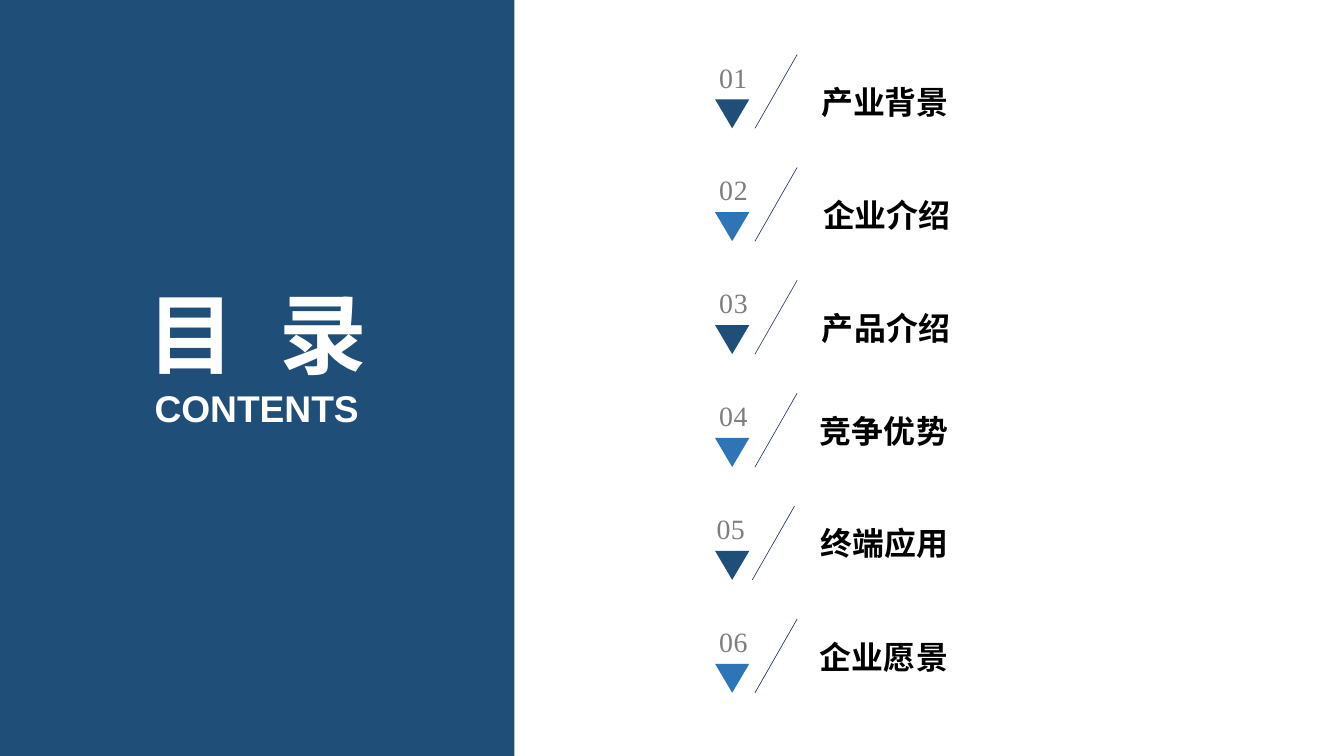
from dataclasses import dataclass

from lxml.etree import SubElement
from pptx import Presentation
from pptx.dml.color import RGBColor as Rgb
from pptx.enum.shapes import MSO_CONNECTOR as Line, MSO_SHAPE as Preset
from pptx.enum.text import MSO_ANCHOR as Anchor, MSO_AUTO_SIZE as Fit, PP_ALIGN as Align
from pptx.oxml.ns import qn
from pptx.util import Cm, Pt


@dataclass(frozen=True)
class Theme:
    navy: Rgb = Rgb(0x1F, 0x4E, 0x79)
    blue: Rgb = Rgb(0x2D, 0x75, 0xB6)
    slash: Rgb = Rgb(0x1F, 0x38, 0x63)
    grey: Rgb = Rgb(0x7E, 0x7E, 0x7E)
    black: Rgb = Rgb(0, 0, 0)
    white: Rgb = Rgb(255, 255, 255)
    title: Pt = Pt(66)
    subtitle: Pt = Pt(28)
    label: Pt = Pt(24)
    number: Pt = Pt(21)
    slash_width: Pt = Pt(0.48)
    heading_font: str = "Arial"
    label_font: str = "Noto Sans CJK SC"
    number_font: str = "Times New Roman"


theme = Theme()


def write(box, spans, font, align=Align.LEFT, anchor=Anchor.TOP, indent=0):
    """Fill a box with (text, letter spacing in points) spans of one font."""
    frame = box.text_frame
    frame_format = dict(word_wrap=True, auto_size=Fit.SHAPE_TO_FIT_TEXT,
                        vertical_anchor=anchor, margin_left=Cm(indent),
                        margin_right=0, margin_top=0, margin_bottom=0)
    for name, value in frame_format.items():
        setattr(frame, name, value)
    para = frame.paragraphs[0]
    para.alignment = align
    for text, spacing in spans:
        span = para.add_run()
        span.text = text
        span.font.color.rgb = font["color"]
        for name in ("name", "size", "bold"):
            setattr(span.font, name, font[name])
        properties = span.font._element
        properties.set("spc", str(round(spacing * 100)))
        SubElement(properties, qn("a:ea"), typeface=theme.label_font)


def add_solid(preset, left, top, width, height, color):
    shape = page.shapes.add_shape(preset, Cm(left), Cm(top), Cm(width), Cm(height))
    shape.shadow.inherit = False
    shape.fill.solid()
    shape.fill.fore_color.rgb = color
    shape.line.fill.background()
    return shape


deck = Presentation()
deck.slide_width, deck.slide_height = Cm(35.71), Cm(20.09)
page = deck.slides.add_slide(deck.slide_layouts[5])

# Left panel with the heading
heading_font = dict(name=theme.heading_font, size=theme.title, bold=True, color=theme.white)
panel = add_solid(Preset.RECTANGLE, 0, 0, 13.67, 20.09, theme.navy)
title = page.shapes.title
title._element.addprevious(panel._element)
title.left, title.top, title.width, title.height = Cm(3.45), Cm(7.42), Cm(6.76), Cm(2.82)
write(title, [("目 ", 9.2), ("录", 0)], heading_font, Align.CENTER, Anchor.MIDDLE)

subtitle = page.shapes.add_textbox(Cm(3.48), Cm(10.24), Cm(6.68), Cm(1.19))
write(subtitle, [("CONTENTS", 0)], heading_font | dict(size=theme.subtitle), Align.CENTER)

# Chapters: label, its left edge, its drop below the row top, its width,
# letter spacing of number and label, shift of number and slash
chapters = [
    ("产业背景", 21.72, 0.74, 10.69, 0.2, 0, 0),
    ("企业介绍", 21.77, 0.74, 10.54, 0.5, 0, 0),
    ("产品介绍", 21.74, 0.74, 12.37, 0.5, 0.3, 0),
    ("竞争优势", 21.67, 0.5, 11.89, 0.4, 0.3, 0),
    ("终端应用", 21.69, 0.46, 10.11, 0.4, 0.3, -0.07),
    ("企业愿景", 21.67, 0.5, 11.89, 0.4, 0.3, 0),
]
first_top, pitch = 1.45, 3.0
number_font = dict(name=theme.number_font, size=theme.number, bold=False, color=theme.grey)
label_font = dict(name=theme.label_font, size=theme.label, bold=True, color=theme.black)

for index, (text, left, drop, width, number_gap, label_gap, shift) in enumerate(chapters):
    top = first_top + index * pitch

    number = page.shapes.add_textbox(Cm(19.08 + shift), Cm(top + 0.15), Cm(0.91), Cm(0.9))
    write(number, [(f"{index + 1:02}", number_gap)], number_font, indent=0.03)

    add_solid(Preset.FLOWCHART_MERGE, 19, top + 1.19, 0.91, 0.77,
              theme.blue if index % 2 else theme.navy)

    slash = page.shapes.add_connector(Line.STRAIGHT, Cm(20.06 + shift), Cm(top + 1.96),
                                      Cm(21.18 + shift), Cm(top))
    slash.line.color.rgb = theme.slash
    slash.line.width = theme.slash_width
    SubElement(slash._element.spPr, qn("a:effectLst"))

    label = page.shapes.add_textbox(Cm(left), Cm(top + drop), Cm(width), Cm(1.02))
    write(label, [(text, label_gap)], label_font, indent=0.1)

deck.save("out.pptx")
